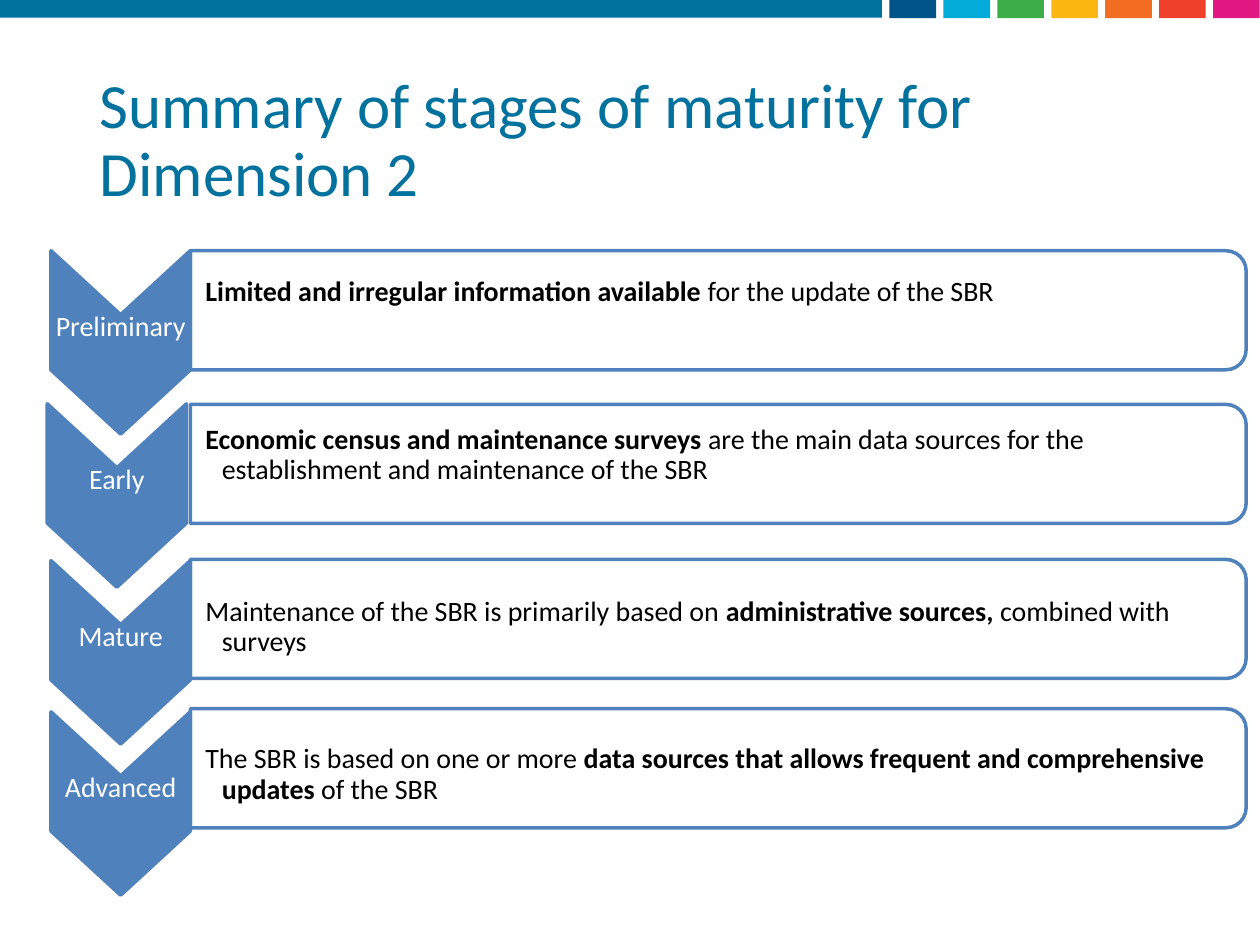
from dataclasses import dataclass

from lxml.etree import SubElement
from pptx import Presentation
from pptx.dml.color import RGBColor
from pptx.enum.shapes import MSO_SHAPE as Shape
from pptx.enum.text import MSO_ANCHOR as Anchor, PP_ALIGN as Align
from pptx.oxml.ns import qn
from pptx.util import Inches, Pt


@dataclass(frozen=True)
class Theme:
    font: str = "Calibri"
    title_size: float = 36
    text_size: float = 16
    outline: float = 2
    teal: str = "01719D"
    blue: str = "4F81BC"
    white: str = "FFFFFF"
    black: str = "000000"
    swatches: tuple = ("005489", "03ACD8", "3DAD48", "FDB713",
                       "F36D22", "EF412A", "E01983")


class Deck:
    """Draws on a grid of 100 columns by 75 rows."""
    COLUMNS, ROWS = 100, 75

    def __init__(self, theme):
        self.theme = theme
        self.file = Presentation()
        self.file.slide_width, self.file.slide_height = Inches(10), Inches(7.5)
        self.slide = self.file.slides.add_slide(self.file.slide_layouts[5])

    def place(self, left, top, width, height):
        column = self.file.slide_width / self.COLUMNS
        row = self.file.slide_height / self.ROWS
        return (round(left * column), round(top * row),
                round(width * column), round(height * row))

    def add_words(self, paragraph, words, size, color, bold=False):
        run = paragraph.add_run()
        run.text = words
        run.font.name, run.font.size, run.font.bold = self.theme.font, Pt(size), bold
        run.font.color.rgb = RGBColor.from_string(color)

    def title(self, words, *area):
        heading = self.slide.shapes.title
        heading.left, heading.top, heading.width, heading.height = self.place(*area)
        heading.text_frame.vertical_anchor = Anchor.MIDDLE
        line = heading.text_frame.paragraphs[0]
        line.alignment, line.line_spacing = Align.LEFT, 0.9
        self.add_words(line, words, self.theme.title_size, self.theme.teal)

    def shape(self, kind, area, fill=None, outline=None):
        drawn = self.slide.shapes.add_shape(kind, *self.place(*area))
        drawn.shadow.inherit = False
        if fill:
            drawn.fill.solid()
            drawn.fill.fore_color.rgb = RGBColor.from_string(fill)
        else:
            drawn.fill.background()
        if outline:
            drawn.line.color.rgb = RGBColor.from_string(outline)
            drawn.line.width = Pt(self.theme.outline)
        else:
            drawn.line.fill.background()
        return drawn

    def turned(self, kind, area, adjustments, fill=None):
        """A preset turned a quarter clockwise so that it covers the area."""
        left, top, width, height = area
        shift = (width - height) / 2
        drawn = self.shape(kind, (left + shift, top - shift, height, width),
                           fill, self.theme.blue)
        drawn.rotation = 90
        for index, value in enumerate(adjustments):
            drawn.adjustments[index] = value

    def text_box(self, area, wrap=True):
        frame = self.slide.shapes.add_textbox(*self.place(*area)).text_frame
        frame.word_wrap = wrap
        frame.margin_left = frame.margin_right = 0
        frame.margin_top = frame.margin_bottom = 0
        return frame.paragraphs[0]

    def label(self, words, *area):
        line = self.text_box(area, wrap=False)
        line.alignment, line.line_spacing = Align.CENTER, Pt(9.9)
        self.add_words(line, words, self.theme.text_size, self.theme.white)

    def statement(self, parts, *area):
        line = self.text_box(area)
        properties = line._p.get_or_add_pPr()
        properties.set("marL", str(Inches(0.22)))
        properties.set("indent", str(Inches(-0.13)))
        SubElement(properties, qn("a:buNone"))
        line.line_spacing = 0.9
        for words, bold in parts:
            self.add_words(line, words, self.theme.text_size, self.theme.black, bold)


# Stage, chevron left and top, box top, statement top, statement runs (words, bold)
STAGES = [
    ("Preliminary", 4.05, 19.9, 19.9, 22.0, [
        ("Limited and irregular information available ", True),
        ("for the update of the SBR", False)]),
    ("Early", 3.75, 32.05, 32.1, 33.75, [
        ("Economic census and maintenance surveys ", True),
        ("are the main data sources for the establishment and maintenance of the SBR",
         False)]),
    ("Mature", 4.05, 44.5, 44.4, 47.4, [
        ("Maintenance of the SBR is primarily based on ", False),
        ("administrative sources,", True),
        (" combined with surveys", False)]),
    ("Advanced", 4.05, 56.5, 56.25, 59.1, [
        ("The SBR is based on one or more ", False),
        ("data sources that allows frequent and comprehensive updates", True),
        (" of the SBR", False)]),
]


def main():
    theme = Theme()
    deck = Deck(theme)

    # Colour strip along the top
    deck.shape(Shape.RECTANGLE, (0, 0, 70, 1.4), theme.teal)
    for index, color in enumerate(theme.swatches):
        deck.shape(Shape.RECTANGLE, (70.6 + 4.28 * index, 0, 3.7, 1.45), color)

    deck.title("Summary of stages of maturity for Dimension 2", 6.9, 4, 86.2, 14.5)

    # One chevron, box and statement per stage
    for stage, left, top, box_top, words_top, parts in STAGES:
        deck.turned(Shape.CHEVRON, (left, top, 11.05, 14.55), [0.46], theme.blue)
        deck.turned(Shape.ROUND_2_SAME_RECTANGLE, (15.1, box_top, 83.8, 9.45),
                    [0.17, 0])
        deck.label(stage, left, top + 5.9, 11.05, 2)
        deck.statement(parts, 15.4, words_top, 83.2, 5.5)

    deck.file.save("out.pptx")


if __name__ == "__main__":
    main()
